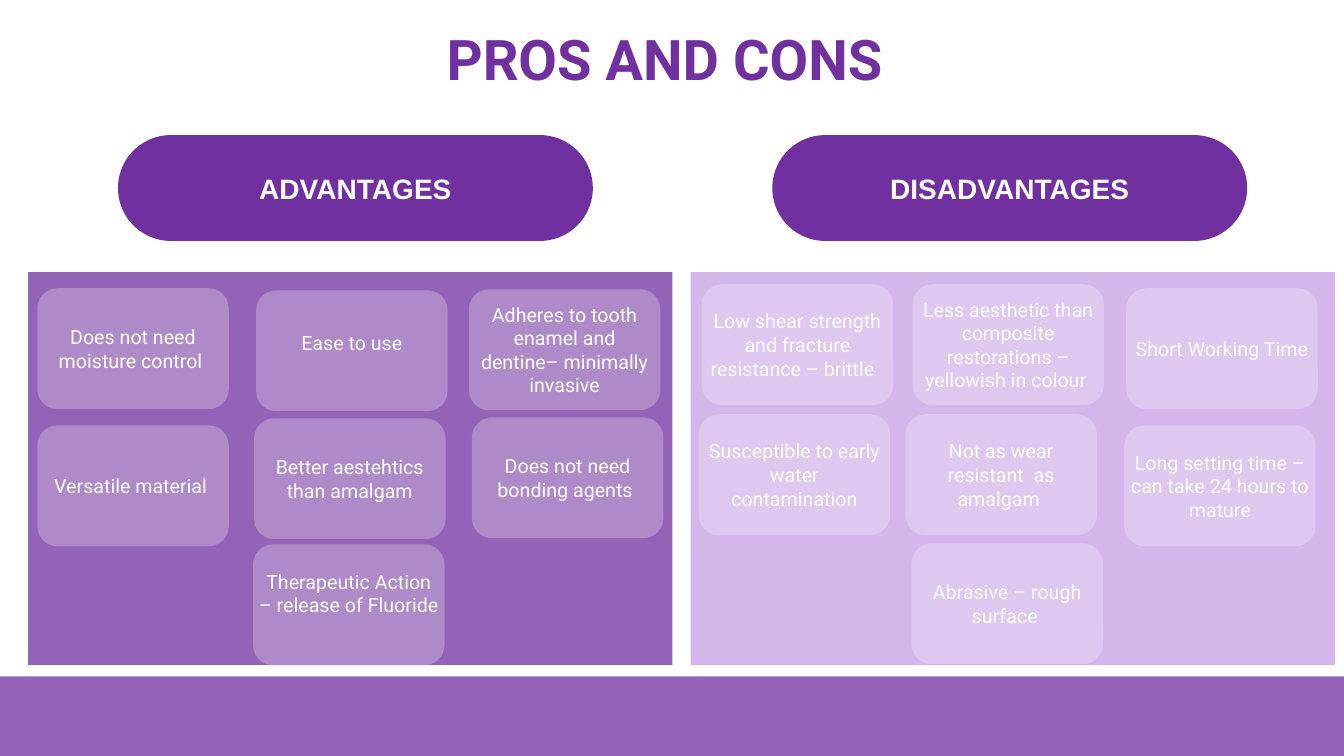
import pptx
import pptx.util
import pptx.dml.color
import pptx.enum.shapes
import pptx.enum.text
import pptx.oxml.ns
import lxml.etree

Inches = pptx.util.Inches
RGBColor = pptx.dml.color.RGBColor
SHAPE = pptx.enum.shapes.MSO_SHAPE

PURPLE = RGBColor(0x70, 0x30, 0xA0)
LILAC = RGBColor(0xD3, 0xB6, 0xEA)
WHITE = RGBColor(0xFF, 0xFF, 0xFF)

CARD_WIDTH, CARD_HEIGHT = 1.9, 1.2

deck = pptx.Presentation()
deck.slide_width = Inches(13.33)
deck.slide_height = Inches(7.5)
slide = deck.slides.add_slide(deck.slide_layouts[6])


def add_block(kind, left, top, width, height, color, opacity=100):
    """Add a borderless filled shape with an opacity in percent."""
    block = slide.shapes.add_shape(
        kind, Inches(left), Inches(top), Inches(width), Inches(height))
    block.shadow.inherit = False
    block.line.fill.background()
    block.fill.solid()
    block.fill.fore_color.rgb = color
    if opacity < 100:
        color_xml = block.fill._xPr.find(".//" + pptx.oxml.ns.qn("a:srgbClr"))
        alpha = lxml.etree.SubElement(color_xml, pptx.oxml.ns.qn("a:alpha"))
        alpha.set("val", str(opacity * 1000))
    return block


def write(block, text, size=14, font="Roboto", color=WHITE, bold=False,
          side=0.1, bottom=0.05, spacing=1.0):
    """Write one centred paragraph into a shape or text box."""
    frame = block.text_frame
    frame.word_wrap = True
    frame.vertical_anchor = pptx.enum.text.MSO_ANCHOR.MIDDLE
    frame.margin_left = frame.margin_right = Inches(side)
    frame.margin_top, frame.margin_bottom = Inches(0.05), Inches(bottom)
    paragraph = frame.paragraphs[0]
    paragraph.alignment = pptx.enum.text.PP_ALIGN.CENTER
    paragraph.line_spacing = spacing
    run = paragraph.add_run()
    run.text = text
    run.font.size = pptx.util.Pt(size)
    run.font.name = font
    run.font.bold = bold
    run.font.color.rgb = color


# Footer band
add_block(SHAPE.RECTANGLE, 0, 6.71, 13.33, 0.79, PURPLE, 75)

# Title
title = slide.shapes.add_textbox(
    Inches(2.03), Inches(0.21), Inches(9.26), Inches(0.82))
write(title, "PROS AND CONS ", size=40, color=PURPLE, bold=True, spacing=0.9)

# Each side: heading, heading left, panel left, panel colour, panel opacity,
# cards as (left, top, text)
sides = [
    ("ADVANTAGES", 1.17, 0.28, PURPLE, 75, [
        (0.37, 2.86, "Does not need moisture control "),
        (2.54, 2.88, "Ease to use"),
        (4.65, 2.87, "Adheres to tooth enamel and dentine– minimally invasive"),
        (0.37, 4.22, "Versatile material "),
        (2.52, 4.15, "Better aestehtics than amalgam"),
        (4.68, 4.14, "Does not need bonding agents "),
        (2.51, 5.4, "Therapeutic Action – release of Fluoride"),
    ]),
    ("DISADVANTAGES", 7.66, 6.85, LILAC, 100, [
        (6.96, 2.82, "Low shear strength and fracture resistance – brittle  "),
        (9.05, 2.82, "Less aesthetic than composite restorations – "
                     "yellowish in colour "),
        (11.17, 2.86, "Short Working Time"),
        (6.93, 4.11, "Susceptible to early water contamination"),
        (8.98, 4.11, "Not as wear resistant  as amalgam "),
        (11.15, 4.22, "Long setting time – can take 24 hours to mature"),
        (9.04, 5.39, "Abrasive – rough surface "),
    ]),
]

# Cards whose text sits above the middle, with their bottom inset
raised = {"Ease to use": 0.21, "Therapeutic Action – release of Fluoride": 0.28}

for heading, heading_left, panel_left, panel_color, opacity, cards in sides:
    # Panel and heading pill
    add_block(SHAPE.RECTANGLE, panel_left, 2.7, 6.39, 3.9, panel_color, opacity)
    pill = add_block(SHAPE.ROUNDED_RECTANGLE, heading_left, 1.34, 4.71, 1.05,
                     PURPLE)
    pill.adjustments[0] = 0.5
    write(pill, heading, size=20, font="Arial", bold=True)

    # Cards
    for left, top, text in cards:
        card = add_block(SHAPE.ROUNDED_RECTANGLE, left, top,
                         CARD_WIDTH, CARD_HEIGHT, WHITE, 25)
        write(card, text, side=0, bottom=raised.get(text, 0.05))

deck.save("out.pptx")
